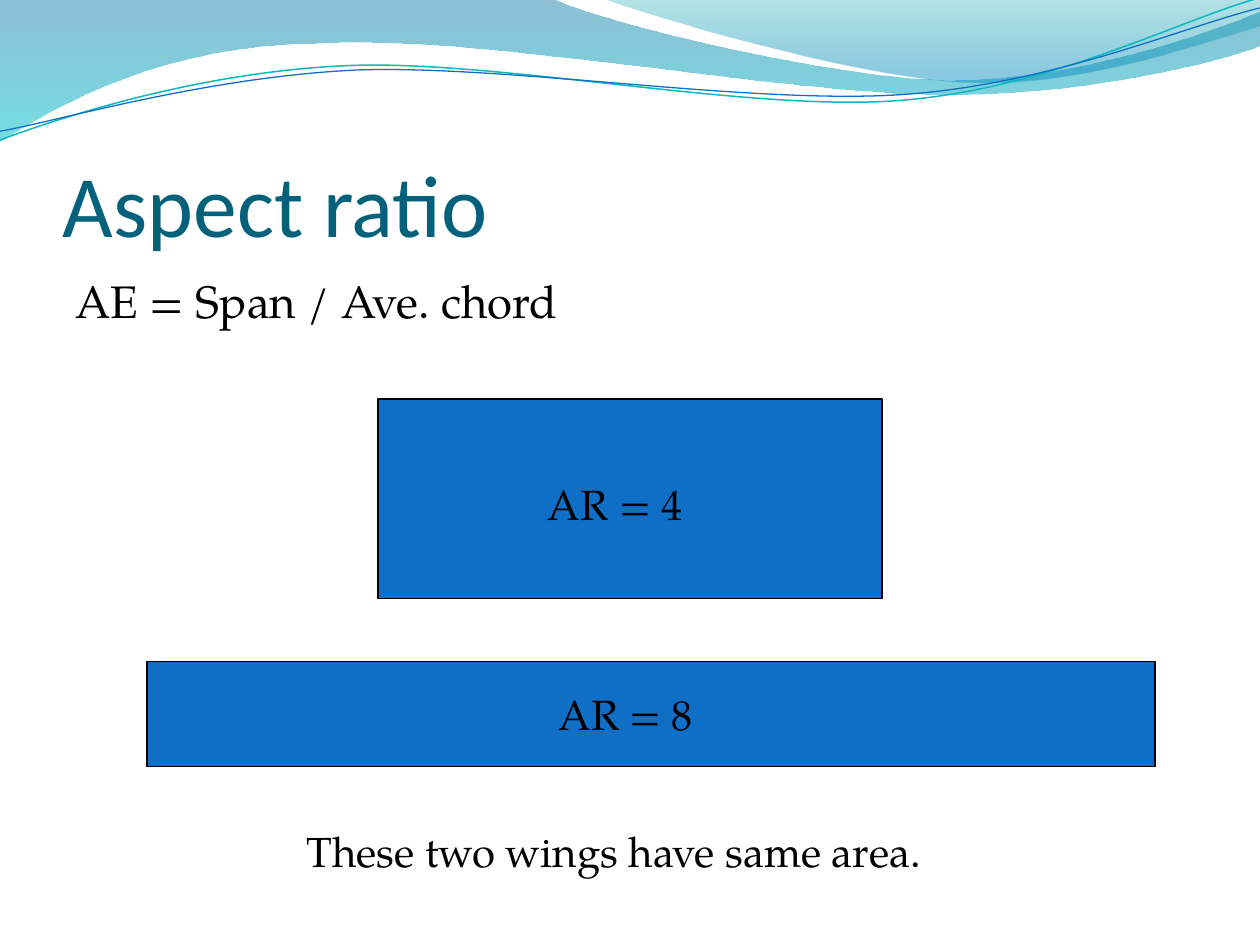
from lxml.etree import Element, SubElement
from pptx import Presentation
from pptx.dml.color import RGBColor
from pptx.enum.shapes import MSO_SHAPE
from pptx.enum.text import MSO_ANCHOR, MSO_AUTO_SIZE
from pptx.oxml.ns import qn
from pptx.util import Pt

BLACK = RGBColor(0x00, 0x00, 0x00)
TITLE_TEAL = RGBColor(0x04, 0x61, 0x7B)
BLUE = RGBColor(0x0F, 0x6F, 0xC6)
CYAN = RGBColor(0x0A, 0xB8, 0xBF)
WAVE_BLUE = RGBColor(0x00, 0x74, 0xA1)
WAVE_CYAN = RGBColor(0x00, 0xC6, 0xCF)
CREST_GREEN = RGBColor(0x00, 0xA1, 0xA9)
CREST_BLUE = RGBColor(0x00, 0x8B, 0xBF)
HEADING_FONT = "Calibri"
BODY_FONT = "TeX Gyre Pagella"

presentation = Presentation()
presentation.slide_width = Pt(720)
presentation.slide_height = Pt(540)
slide = presentation.slides.add_slide(presentation.slide_layouts[6])
shapes = slide.shapes


def add_outline(start, segments, close):
    """Draw segments of one point (a line) or three points (a Bezier curve)."""
    builder = shapes.build_freeform(Pt(start[0]), Pt(start[1]))
    builder.add_line_segments([(Pt(x), Pt(y)) for segment in segments for x, y in segment],
                              close=close)
    shape = builder.convert_to_shape()
    shape.shadow.inherit = False
    lines = iter(list(shape.element.spPr.iter(qn("a:lnTo"))))
    for segment in segments:
        group = [next(lines) for _ in segment]
        if len(group) == 3:
            curve = Element(qn("a:cubicBezTo"))
            group[0].addprevious(curve)
            for line in group:
                curve.append(line[0])
                line.getparent().remove(line)
    return shape


def add_text(text, left, top, width, height, size, font=BODY_FONT, color=BLACK, before=0):
    box = shapes.add_textbox(Pt(left), Pt(top), Pt(width), Pt(height))
    box.text_frame.word_wrap = True
    paragraph = box.text_frame.paragraphs[0]
    paragraph.space_before = Pt(before)
    run = paragraph.add_run()
    run.text = text
    run.font.name = font
    run.font.size = Pt(size)
    run.font.color.rgb = color
    return box.text_frame


# Translucent waves; each stop is position, colour, opacity in percent
waves = [
    ((0, -0.5), [
        [(317, -0.5)],
        [(343, 12), (478, 45.5), (546, 45.5)],
        [(614, 45.5), (690, 19), (720, 6.5)],
        [(720.5, 26)],
        [(708, 32), (626, 55), (537, 54)],
        [(448, 54), (275, 20), (185, 24.5)],
        [(93, 25), (33, 60), (-0.5, 81)],
    ], [(0, WAVE_BLUE, 45), (1, WAVE_CYAN, 55)]),
    ((345, -0.5), [
        [(366, 8), (491, 45), (554, 47)],
        [(616, 50), (692, 23), (720, 15)],
        [(720, 0)],
    ], [(0, CREST_GREEN, 30), (0.8, CREST_BLUE, 45)]),
]
for start, segments, stops in waves:
    wave = add_outline(start, segments, close=True)
    wave.line.fill.background()
    wave.fill.gradient()
    wave.fill.gradient_angle = 270
    for stop, (position, color, _) in zip(wave.fill.gradient_stops, stops):
        stop.position = position
        stop.color.rgb = color
    color_elements = list(wave.element.spPr.iter(qn("a:srgbClr")))
    for color_element, (_, _, opacity) in zip(color_elements, stops):
        SubElement(color_element, qn("a:alpha"), val=str(opacity * 1000))

# Thin curves under the waves
curves = [
    ((0, 80), [
        [(35, 67), (114, 41), (199, 37.5)],
        [(284, 34), (427, 64), (513, 57.5)],
        [(600, 51), (675, 11), (719, -1)],
    ], CYAN, 0.85),
    ((0, 75), [
        [(34, 69), (118, 44), (204, 40)],
        [(290, 37), (430, 60), (516, 54)],
        [(602, 48), (677, 15), (720, 4.5)],
    ], BLUE, 0.75),
]
for start, segments, color, weight in curves:
    curve = add_outline(start, segments, close=False)
    curve.fill.background()
    curve.line.color.rgb = color
    curve.line.width = Pt(weight)

title = add_text("Aspect ratio", 36, 55.5, 648, 90, 50, HEADING_FONT, TITLE_TEAL)
title.vertical_anchor = MSO_ANCHOR.BOTTOM
title.margin_left = title.margin_right = title.margin_bottom = 0

add_text("AE = Span / Ave. chord", 36, 152.5, 648, 345.5, 26, before=5.2)

# Two wings of equal area
for left, top, width, height in [(216, 228, 288, 114), (84, 378, 576, 60)]:
    wing = shapes.add_shape(MSO_SHAPE.RECTANGLE, Pt(left), Pt(top), Pt(width), Pt(height))
    wing.shadow.inherit = False
    wing.fill.solid()
    wing.fill.fore_color.rgb = BLUE
    wing.line.color.rgb = BLACK
    wing.line.width = Pt(0.75)

for text, left, top, width in [
    ("These two wings have same area.", 168, 468, 456),
    ("AR = 4", 306, 270, 114),
    ("AR = 8", 312, 390, 114),
]:
    frame = add_text(text, left, top, width, 36, 24, before=12)
    frame.auto_size = MSO_AUTO_SIZE.SHAPE_TO_FIT_TEXT

presentation.save("out.pptx")
